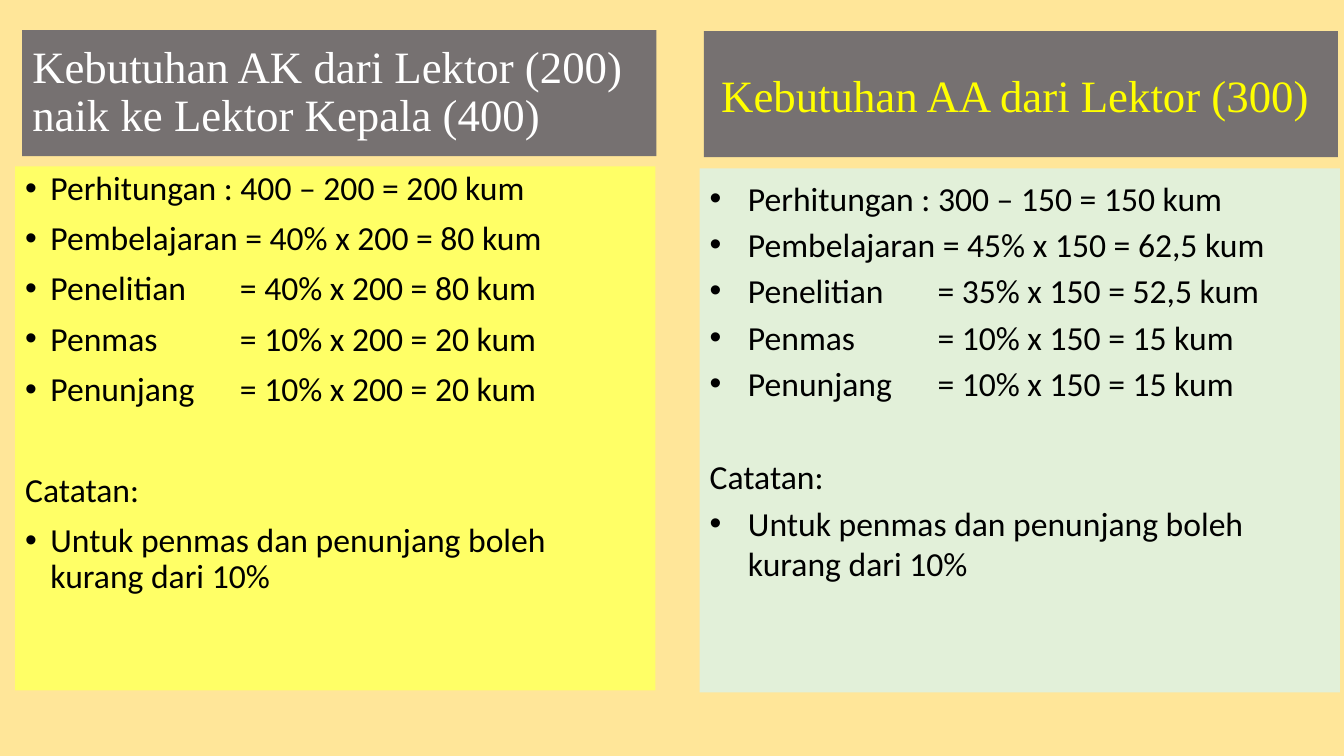
from lxml.etree import SubElement
from pptx import Presentation
from pptx.dml.color import RGBColor
from pptx.enum.shapes import MSO_SHAPE as Preset
from pptx.enum.text import MSO_ANCHOR as Anchor, MSO_AUTO_SIZE as AutoSize, PP_ALIGN as Align
from pptx.oxml.ns import qn
from pptx.util import Inches, Pt

SAND = RGBColor(0xFF, 0xE6, 0x99)
GREY = RGBColor(0x76, 0x71, 0x71)
LEMON = RGBColor(0xFF, 0xFF, 0x66)
MINT = RGBColor(0xE2, 0xF0, 0xD9)
YELLOW = RGBColor(0xFF, 0xFF, 0x00)
WHITE = RGBColor(0xFF, 0xFF, 0xFF)
BLACK = RGBColor(0x00, 0x00, 0x00)

NOTE = "Catatan:"
REMARK = "Untuk penmas dan penunjang boleh kurang dari 10%"
LEKTOR_KEPALA = [
    "Perhitungan : 400 – 200 = 200 kum",
    "Pembelajaran = 40% x 200 = 80 kum",
    "Penelitian\t= 40% x 200 = 80 kum",
    "Penmas\t= 10% x 200 = 20 kum",
    "Penunjang\t= 10% x 200 = 20 kum",
    NOTE,
    REMARK,
]
LEKTOR = [
    "Perhitungan : 300 – 150 = 150 kum",
    "Pembelajaran = 45% x 150 = 62,5 kum",
    "Penelitian\t= 35% x 150 = 52,5 kum",
    "Penmas\t= 10% x 150 = 15 kum",
    "Penunjang\t= 10% x 150 = 15 kum",
    NOTE,
    REMARK,
]


class Comparison:
    """Builds the two-column credit comparison on one page."""

    def __init__(self, deck):
        self.page = deck.slides.add_slide(deck.slide_layouts[1])
        self.page.background.fill.solid()
        self.page.background.fill.fore_color.rgb = SAND
        self.heading_font, self.heading_size = "Times New Roman", Pt(32)
        self.list_font, self.list_size = "Calibri", Pt(24)

    def rectangle(self):
        """Add a plain rectangle without line or shadow."""
        box = self.page.shapes.add_shape(Preset.RECTANGLE, 0, 0, Inches(1), Inches(1))
        box.shadow.inherit = False
        box.line.fill.background()
        return box

    def panel(self, box, left, top, width, height, fill, anchor):
        """Place and fill a box, and prepare its text frame."""
        box.left, box.top = Inches(left), Inches(top)
        box.width, box.height = Inches(width), Inches(height)
        box.fill.solid()
        box.fill.fore_color.rgb = fill
        frame = box.text_frame
        frame.word_wrap = True
        frame.auto_size = AutoSize.NONE
        frame.vertical_anchor = anchor
        return frame

    def style(self, para, name, size, color):
        """Format every run of a paragraph."""
        for span in para.runs:
            span.font.name, span.font.size = name, size
            span.font.color.rgb = color

    def heading(self, box, left, top, text, color, align, spacing):
        """Write a column heading."""
        frame = self.panel(box, left, top, 6.29, 1.25, GREY, Anchor.MIDDLE)
        frame.text = text
        para = frame.paragraphs[0]
        para.alignment, para.line_spacing = align, spacing
        self.style(para, self.heading_font, self.heading_size, color)

    def bullets(self, box, left, top, fill, lines, indent, spacing, gap, note_gap, inset):
        """Write a bulleted list with an unbulleted note heading."""
        frame = self.panel(box, left, top, 6.35, 5.2, fill, Anchor.TOP)
        frame.margin_top = Inches(inset)
        frame.text = "\n".join(lines)
        for index, para in enumerate(frame.paragraphs):
            is_note = lines[index] == NOTE
            before = note_gap if is_note else gap
            self.mark(para, 0 if is_note else indent, "\t" in lines[index])
            para.alignment, para.line_spacing = Align.LEFT, spacing
            para.space_before = Pt(before if index else 0)
            self.style(para, self.list_font, self.list_size, BLACK)

    def mark(self, para, indent, has_tab):
        """Set the indent, bullet and tab stop of a paragraph."""
        properties = para._p.get_or_add_pPr()
        properties.set("marL", str(Inches(indent)))
        properties.set("indent", str(-Inches(indent)))
        if indent:
            SubElement(properties, qn("a:buFont"), typeface="Arial")
            SubElement(properties, qn("a:buChar"), char="•")
        else:
            SubElement(properties, qn("a:buNone"))
        if has_tab:
            stops = SubElement(properties, qn("a:tabLst"))
            SubElement(stops, qn("a:tab"), pos=str(Inches(indent + 1.88)), algn="l")


def main():
    """Build and save the deck."""
    deck = Presentation()
    deck.slide_width, deck.slide_height = Inches(13.33), Inches(7.5)
    slide = Comparison(deck)
    title, body = slide.page.placeholders
    slide.heading(title, 0.22, 0.3, "Kebutuhan AK dari Lektor (200) naik ke Lektor Kepala (400)",
                  WHITE, Align.LEFT, 0.9)
    slide.bullets(body, 0.15, 1.65, LEMON, LEKTOR_KEPALA, 0.25, 0.9, 10, 46, 0.05)
    slide.heading(slide.rectangle(), 6.98, 0.31, "Kebutuhan AA dari Lektor (300) ",
                  YELLOW, Align.CENTER, 1.0)
    slide.bullets(slide.rectangle(), 6.94, 1.67, MINT, LEKTOR, 0.38, 1.0, 4.3, 38, 0.09)
    deck.save("out.pptx")


if __name__ == "__main__":
    main()
